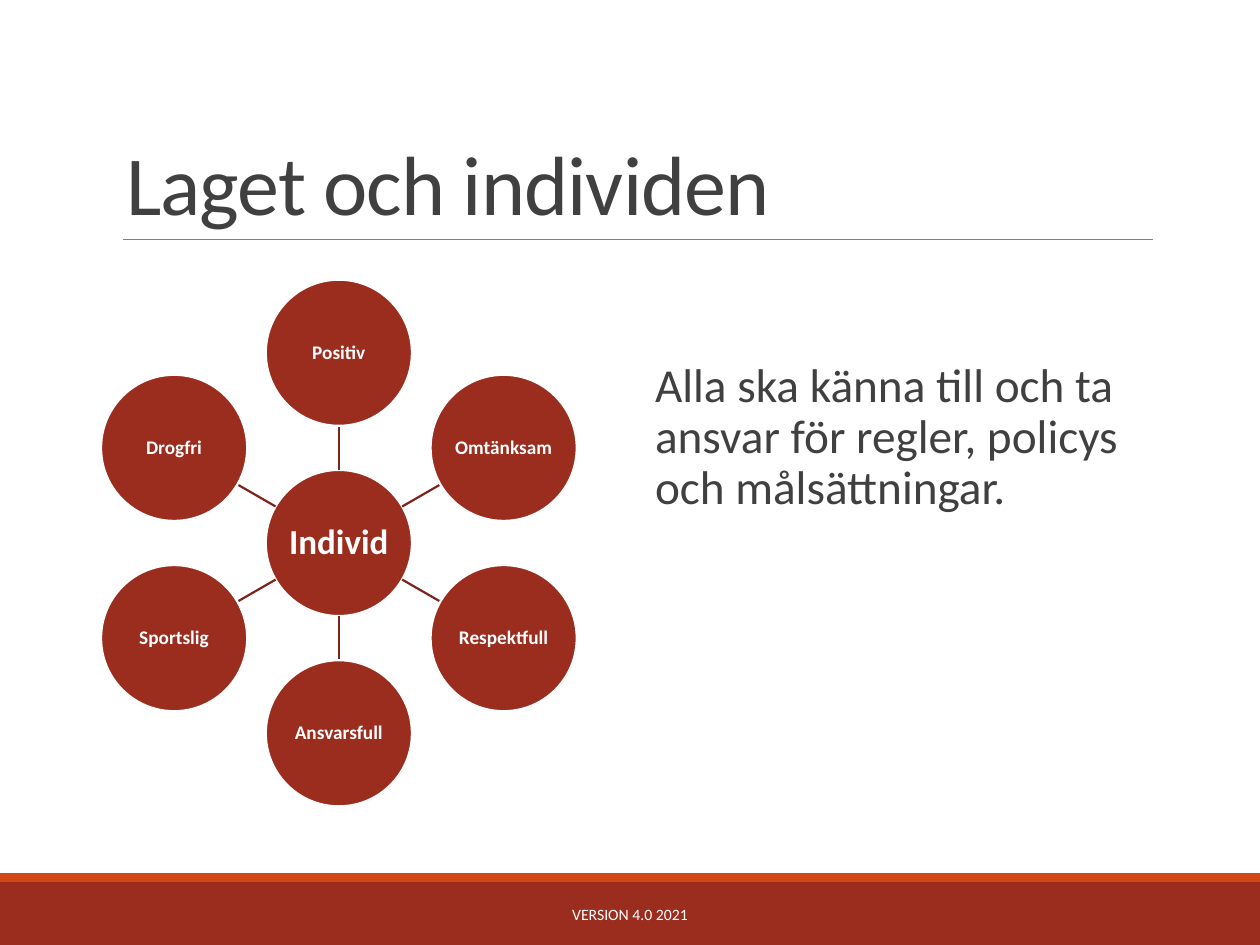
from math import cos, radians, sin

from pptx import Presentation
from pptx.dml.color import RGBColor
from pptx.enum.shapes import MSO_CONNECTOR, MSO_SHAPE
from pptx.enum.text import MSO_ANCHOR, PP_ALIGN
from pptx.oxml.ns import qn
from pptx.util import Inches, Pt

STRAIGHT = MSO_CONNECTOR.STRAIGHT
RECT, OVAL = MSO_SHAPE.RECTANGLE, MSO_SHAPE.OVAL
TOP, MIDDLE, BOTTOM = MSO_ANCHOR.TOP, MSO_ANCHOR.MIDDLE, MSO_ANCHOR.BOTTOM
LEFT, CENTER = PP_ALIGN.LEFT, PP_ALIGN.CENTER

TITLE = "Laget och individen"
BODY = "Alla ska känna till och ta ansvar för regler, policys och målsättningar."
FOOTER = "VERSION 4.0 2021"
HUB = "Individ"
TRAITS = ["Positiv", "Omtänksam", "Respektfull", "Ansvarsfull", "Sportslig", "Drogfri"]
BANDS = [(7, 0.5, "9B2D1F"), (6.93, 0.07, "D34817")]
RED, SPOKE, GRAY, DARK, WHITE = "9B2D1F", "7C2419", "808080", "404040", "FFFFFF"
CX, CY, ORBIT, DIAMETER = 2.69, 4.31, 1.51, 1.16


def rgb(value):
    return RGBColor.from_string(value)


def write(sp, text, size, color, align=LEFT, anchor=TOP, bold=False, spacing=None, inset=(0.1, 0.05)):
    tf = sp.text_frame
    tf.text = text
    tf.word_wrap = True
    tf.vertical_anchor = anchor
    tf.margin_left = tf.margin_right = Inches(inset[0])
    tf.margin_top = tf.margin_bottom = Inches(inset[1])
    p = tf.paragraphs[0]
    p.alignment = align
    p.line_spacing = spacing
    font = p.runs[0].font
    font.name, font.size, font.bold = "Calibri", Pt(size), bold
    font.color.rgb = rgb(color)
    return p


def add_shape(s, kind, x, y, w, h, fill):
    sp = s.shapes.add_shape(kind, Inches(x), Inches(y), Inches(w), Inches(h))
    sp.shadow.inherit = False
    sp.fill.solid()
    sp.fill.fore_color.rgb = rgb(fill)
    sp.line.fill.background()
    return sp


def add_line(s, x1, y1, x2, y2, color, width):
    line = s.shapes.add_connector(STRAIGHT, Inches(x1), Inches(y1), Inches(x2), Inches(y2))
    line.line.color.rgb = rgb(color)
    line.line.width = Pt(width)
    sp_pr = line._element.spPr
    sp_pr.append(sp_pr.makeelement(qn("a:effectLst"), {}))


def add_circle(s, x, y, text, size):
    r = DIAMETER / 2
    sp = add_shape(s, OVAL, x - r, y - r, DIAMETER, DIAMETER, RED)
    sp.line.color.rgb = rgb(WHITE)
    sp.line.width = Pt(1.25)
    write(sp, text, size, WHITE, CENTER, MIDDLE, True, 0.9, (0.01, 0.01))


def add_textbox(s, x, y, w, h):
    return s.shapes.add_textbox(Inches(x), Inches(y), Inches(w), Inches(h))


def add_wheel(s):
    add_circle(s, CX, CY, HUB, 20)
    inner, outer = DIAMETER / 2, ORBIT - DIAMETER / 2
    for i, trait in enumerate(TRAITS):
        angle = radians(i * 360 / len(TRAITS) - 90)
        dx, dy = cos(angle), sin(angle)
        add_line(s, CX + inner * dx, CY + inner * dy, CX + outer * dx, CY + outer * dy, SPOKE, 1.25)
        add_circle(s, CX + ORBIT * dx, CY + ORBIT * dy, trait, 11)


def main():
    """Build the slide about the team and the individual."""
    prs = Presentation()
    prs.slide_width, prs.slide_height = Inches(10), Inches(7.5)
    s = prs.slides.add_slide(prs.slide_layouts[5])
    for y, h, color in BANDS:
        add_shape(s, RECT, 0, y, 10, h, color)
    add_line(s, 0.98, 1.9, 9.15, 1.9, GRAY, 0.5)

    title = s.shapes.title
    title.left, title.top, title.width, title.height = map(Inches, (0.9, 0.31, 8.25, 1.59))
    p = write(title, TITLE, 48, DARK, anchor=BOTTOM, spacing=0.85)
    p.runs[0].font._element.set("spc", "-50")

    add_wheel(s)
    write(add_textbox(s, 5.1, 2.82, 4.05, 3.59), BODY, 27, DARK, spacing=0.9)
    write(add_textbox(s, 3.02, 7.06, 3.96, 0.4), FOOTER, 9, WHITE, CENTER, MIDDLE)
    prs.save("out.pptx")


if __name__ == "__main__":
    main()
